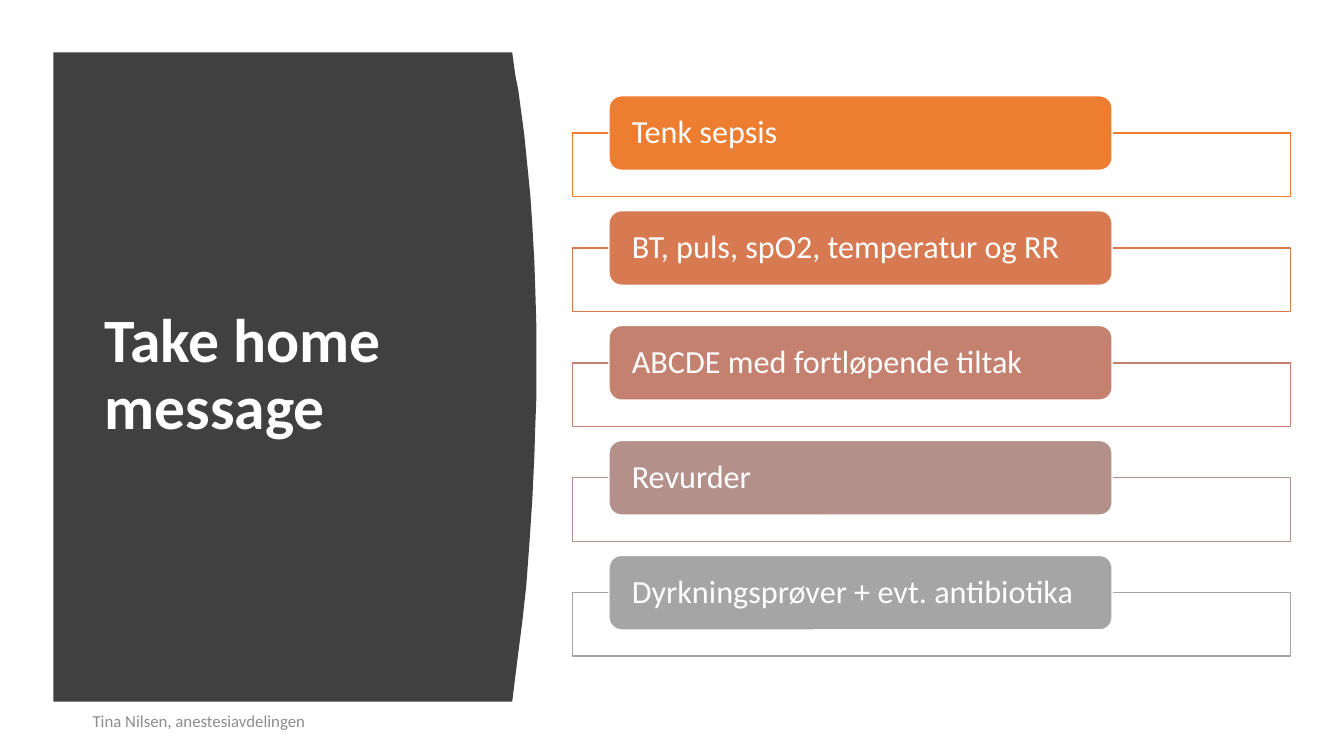
from pptx import Presentation
from pptx.dml.color import RGBColor
from pptx.enum.shapes import MSO_SHAPE
from pptx.enum.text import MSO_ANCHOR, PP_ALIGN
from pptx.util import Inches, Pt

WHITE = RGBColor(0xFF, 0xFF, 0xFF)
CHARCOAL = RGBColor(0x40, 0x40, 0x40)
GRAY = RGBColor(0x8C, 0x8C, 0x8C)

TITLE = "Take home message"
FOOTER = "Tina Nilsen, anestesiavdelingen"
MESSAGES = [
    ("Tenk sepsis", RGBColor(0xED, 0x7D, 0x31)),
    ("BT, puls, spO2, temperatur og RR", RGBColor(0xD8, 0x7A, 0x51)),
    ("ABCDE med fortløpende tiltak", RGBColor(0xC4, 0x81, 0x70)),
    ("Revurder", RGBColor(0xB4, 0x90, 0x8B)),
    ("Dyrkningsprøver + evt. antibiotika", RGBColor(0xA5, 0xA5, 0xA5)),
]

PANEL_LEFT, PANEL_TOP, PANEL_BOTTOM = 0.53, 0.52, 6.96
# Points down the bowed right edge of the panel
PANEL_EDGE = [
    (5.08, PANEL_TOP), (5.11, 0.74), (5.14, 0.89), (5.16, 1.04), (5.18, 1.19),
    (5.2, 1.34), (5.23, 1.64), (5.26, 1.94), (5.28, 2.24), (5.3, 2.6),
    (5.31, 2.9), (5.32, 3.25), (5.32, 3.94), (5.31, 4.2), (5.3, 4.52),
    (5.28, 4.95), (5.25, 5.4), (5.22, 5.81), (5.18, 6.17), (5.14, 6.48),
    (5.11, 6.72), (5.08, PANEL_BOTTOM),
]

FRAME_LEFT, FRAME_WIDTH, FRAME_HEIGHT = 5.68, 7.12, 0.63
PILL_LEFT, PILL_WIDTH, PILL_HEIGHT = 6.04, 4.99, 0.74
FIRST_PILL_TOP, ROW_STEP = 0.95, 1.14


def style_shape(shape, fill, line=None):
    shape.shadow.inherit = False
    shape.fill.solid()
    shape.fill.fore_color.rgb = fill
    if line is None:
        shape.line.fill.background()
    else:
        shape.line.color.rgb = line
        shape.line.width = Pt(1)


def write_text(shape, text, size, color=WHITE, bold=False, spacing=1.0,
               side_inset=0.1, end_inset=0.05):
    frame = shape.text_frame
    frame.word_wrap = True
    frame.vertical_anchor = MSO_ANCHOR.MIDDLE
    frame.margin_left = frame.margin_right = Inches(side_inset)
    frame.margin_top = frame.margin_bottom = Inches(end_inset)
    para = frame.paragraphs[0]
    para.alignment = PP_ALIGN.LEFT
    para.line_spacing = spacing
    span = para.add_run()
    span.text = text
    span.font.name = "Calibri"
    span.font.size = Pt(size)
    span.font.bold = bold
    span.font.color.rgb = color


def add_panel(page):
    builder = page.shapes.build_freeform(
        Inches(PANEL_LEFT), Inches(PANEL_TOP))
    corners = PANEL_EDGE + [(PANEL_LEFT, PANEL_BOTTOM)]
    builder.add_line_segments(
        [(Inches(x), Inches(y)) for x, y in corners], close=True)
    style_shape(builder.convert_to_shape(), CHARCOAL)


def add_message(page, row, text, color):
    top = FIRST_PILL_TOP + row * ROW_STEP
    frame = page.shapes.add_shape(
        MSO_SHAPE.RECTANGLE, Inches(FRAME_LEFT), Inches(top + PILL_HEIGHT / 2),
        Inches(FRAME_WIDTH), Inches(FRAME_HEIGHT))
    style_shape(frame, WHITE, color)
    pill = page.shapes.add_shape(
        MSO_SHAPE.ROUNDED_RECTANGLE, Inches(PILL_LEFT), Inches(top),
        Inches(PILL_WIDTH), Inches(PILL_HEIGHT))
    style_shape(pill, color, WHITE)
    write_text(pill, text, 23, spacing=0.9, side_inset=0.19, end_inset=0)


def main():
    deck = Presentation()
    deck.slide_width, deck.slide_height = Inches(13.33), Inches(7.5)
    page = deck.slides.add_slide(deck.slide_layouts[6])

    add_panel(page)
    title_box = page.shapes.add_textbox(
        Inches(0.94), Inches(1.11), Inches(3.74), Inches(5.24))
    write_text(title_box, TITLE, 44, bold=True, spacing=0.9)
    footer_box = page.shapes.add_textbox(
        Inches(0.82), Inches(6.95), Inches(4.5), Inches(0.4))
    write_text(footer_box, FOOTER, 12, color=GRAY)

    for row, (text, color) in enumerate(MESSAGES):
        add_message(page, row, text, color)
    deck.save("out.pptx")


if __name__ == "__main__":
    main()
